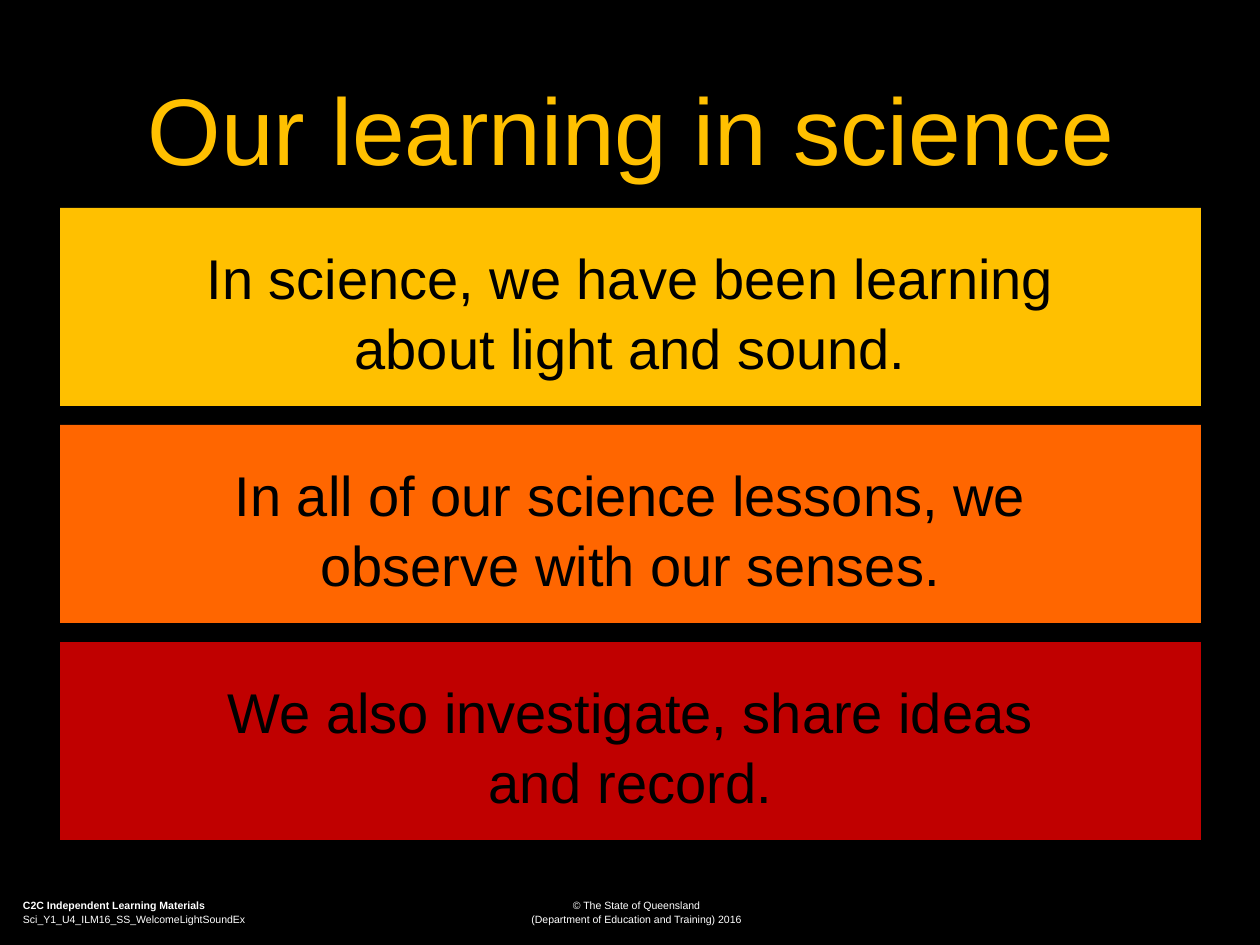
from dataclasses import dataclass

from pptx import Presentation
from pptx.dml.color import RGBColor as Color
from pptx.enum.shapes import MSO_SHAPE as Shape
from pptx.enum.text import MSO_ANCHOR as Anchor, PP_ALIGN as Align
from pptx.util import Emu, Pt


@dataclass(frozen=True)
class Theme:
    font: str = "Arial"
    background: str = "000000"
    title: str = "FFC000"
    body: str = "000000"
    footer: str = "FFFFFF"
    panels: tuple = ("FFC000", "FF6600", "C00000")
    title_size: int = 54
    body_size: int = 32
    footer_size: int = 6


THEME = Theme()
PX = 914400 // 126


def px(count):
    return Emu(count * PX)


def write(box, lines, *, size, color, align=Align.CENTER, anchor=Anchor.TOP,
          side=13, top=6, spacing=None, after=0, bold_first=False):
    """Fill the box with one paragraph per line; side and top are insets in px."""
    frame = box.text_frame
    frame.word_wrap = True
    frame.vertical_anchor = anchor
    frame.margin_left = frame.margin_right = px(side)
    frame.margin_top, frame.margin_bottom = px(top), px(6)
    for index, line in enumerate(lines):
        para = frame.add_paragraph() if index else frame.paragraphs[0]
        para.alignment = align
        para.space_after = Pt(after)
        if spacing:
            para.line_spacing = spacing
        span = para.add_run()
        span.text = line
        span.font.name = THEME.font
        span.font.size = Pt(size)
        span.font.bold = bold_first and index == 0
        span.font.color.rgb = Color.from_string(color)


deck = Presentation()
deck.slide_width, deck.slide_height = px(1260), px(945)
page = deck.slides.add_slide(deck.slide_layouts[6])
page.background.fill.solid()
page.background.fill.fore_color.rgb = Color.from_string(THEME.background)

# Footer
footers = [
    (10, Align.LEFT, True,
     ["C2C Independent Learning Materials", "Sci_Y1_U4_ILM16_SS_WelcomeLightSoundEx"]),
    (503, Align.CENTER, False,
     ["© The State of Queensland", "(Department of Education and Training) 2016"]),
]
for left, align, bold_first, lines in footers:
    footer = page.shapes.add_textbox(px(left), px(893), px(267), px(40))
    write(footer, lines, size=THEME.footer_size, color=THEME.footer,
          align=align, after=1, bold_first=bold_first)

# Title
title = page.shapes.add_textbox(px(64), px(55), px(1134), px(158))
write(title, ["Our learning in science"], size=THEME.title_size, color=THEME.title, top=16)

# Statement panels
statements = [
    ["In science, we have been learning about light and sound."],
    ["In all of our science lessons, we observe with our senses."],
    ["We also investigate, share ideas", "and record."],
]
PANEL_TOP, PANEL_HEIGHT, PANEL_STEP = 208, 198, 217
for row, (lines, fill) in enumerate(zip(statements, THEME.panels)):
    panel = page.shapes.add_shape(
        Shape.RECTANGLE, px(60), px(PANEL_TOP + row * PANEL_STEP), px(1141), px(PANEL_HEIGHT))
    panel.shadow.inherit = False
    panel.fill.solid()
    panel.fill.fore_color.rgb = Color.from_string(fill)
    panel.line.fill.background()
    write(panel, lines, size=THEME.body_size, color=THEME.body,
          anchor=Anchor.MIDDLE, side=74, top=13, spacing=1.04)

deck.save("out.pptx")
